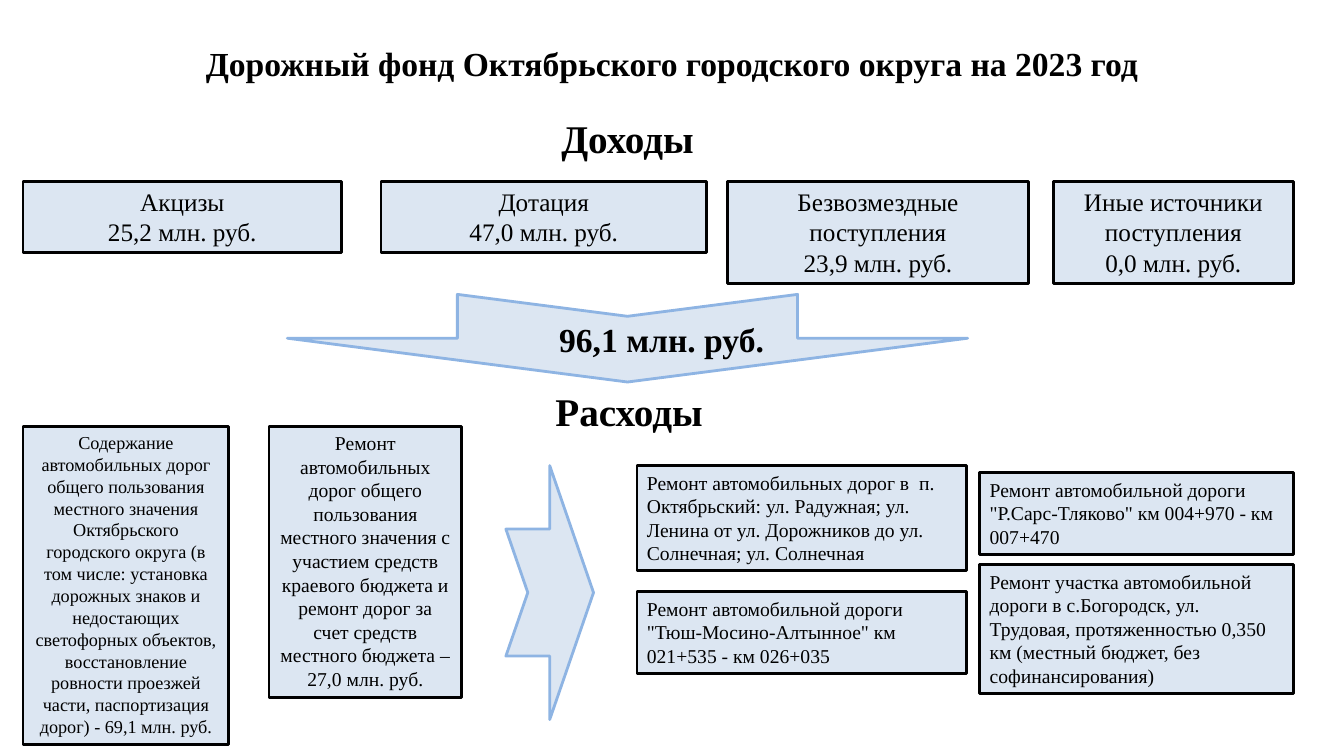
import pptx
import pptx.dml.color
import pptx.enum.shapes
import pptx.enum.text
import pptx.util

Pt = pptx.util.Pt
SHAPES = pptx.enum.shapes.MSO_SHAPE
ALIGN = pptx.enum.text.PP_ALIGN
ANCHOR = pptx.enum.text.MSO_ANCHOR
FIT = pptx.enum.text.MSO_AUTO_SIZE

FONT = "Times New Roman"
BLACK, PALE_BLUE, ARROW_BLUE = "000000", "DCE6F2", "8EB4E3"
INCOME_TOP, EXPENSE_TOP = 129.6, 304.5

INCOME = [
    (16.5, 227.5, 51, "Акцизы\n25,2 млн. руб."),
    (272.2, 232.5, 51, "Дотация\n47,0 млн. руб."),
    (519.8, 214.6, 72.7, "Безвозмездные поступления\n23,9 млн. руб."),
    (752.4, 171.4, 72.7, "Иные источники поступления\n0,0 млн. руб."),
]
EXPENSES = [
    (16.5, 146.9, 227.5, 13,
     "Содержание автомобильных дорог общего пользования местного значения "
     "Октябрьского городского округа (в том числе: установка дорожных знаков и "
     "недостающих светофорных объектов, восстановление ровности проезжей части, "
     "паспортизация дорог) - 69,1 млн. руб."),
    (192.2, 137.5, 193.7, 14,
     "Ремонт автомобильных дорог общего пользования местного значения с участием "
     "средств краевого бюджета и ремонт дорог за счет средств местного бюджета – "
     "27,0 млн. руб."),
]
REPAIRS = [
    (455, 332.6, 235.4, 74.9,
     "Ремонт автомобильных дорог в  п. Октябрьский: ул. Радужная; ул. Ленина "
     "от ул. Дорожников до ул. Солнечная; ул. Солнечная"),
    (455, 422.6, 235.4, 58.3,
     'Ремонт автомобильной дороги "Тюш-Мосино-Алтынное" км 021+535 - км 026+035'),
    (699.8, 337.7, 223.9, 58.3,
     'Ремонт автомобильной дороги "Р.Сарс-Тляково" км 004+970 - км 007+470'),
    (699.8, 403.2, 223.9, 92.2,
     "Ремонт участка автомобильной дороги в с.Богородск, ул. Трудовая, "
     "протяженностью 0,350 км (местный бюджет, без софинансирования)"),
]


def color(value):
    """Return the colour for a hex string."""
    return pptx.dml.color.RGBColor.from_string(value)


def set_attributes(target, values):
    """Set each named attribute of the target."""
    for name, value in values.items():
        setattr(target, name, value)


def place(shape, left, top, width, height):
    """Move and size a shape, in points."""
    frame = {"left": left, "top": top, "width": width, "height": height}
    set_attributes(shape, {name: Pt(value) for name, value in frame.items()})


def write(shape, text, size, alignment, bold=False, **frame_values):
    """Write formatted text into a shape, one paragraph per line."""
    frame = shape.text_frame
    frame.text = text
    defaults = {"word_wrap": True, "vertical_anchor": ANCHOR.TOP,
                "auto_size": FIT.SHAPE_TO_FIT_TEXT}
    set_attributes(frame, {**defaults, **frame_values})
    for paragraph in frame.paragraphs:
        paragraph.alignment = alignment
        for run in paragraph.runs:
            set_attributes(run.font, {"name": FONT, "size": Pt(size), "bold": bold})
            run.font.color.rgb = color(BLACK)


def add_title(slide, text):
    """Fill and place the title placeholder."""
    title = slide.shapes.title
    place(title, 48, 15.8, 864, 59)
    write(title, text, 24, ALIGN.CENTER, True,
          vertical_anchor=ANCHOR.MIDDLE, auto_size=FIT.NONE)


def add_label(slide, box, text, size, alignment=ALIGN.CENTER, **frame_values):
    """Add a bold text box."""
    label = slide.shapes.add_textbox(*map(Pt, box))
    write(label, text, size, alignment, True, **frame_values)


def add_filled_shape(slide, kind, box, line):
    """Add a pale blue preset shape with a coloured outline."""
    shape = slide.shapes.add_shape(kind, *map(Pt, box))
    shape.shadow.inherit = False
    shape.fill.solid()
    shape.fill.fore_color.rgb = color(PALE_BLUE)
    shape.line.color.rgb = color(line)
    shape.line.width = Pt(2)
    return shape


def add_card(slide, box, text, size, alignment=ALIGN.CENTER):
    """Add a black-edged rectangle with text."""
    card = add_filled_shape(slide, SHAPES.RECTANGLE, box, BLACK)
    write(card, text, size, alignment)


def add_arrow(slide, box, rotation=0):
    """Add a notched arrow."""
    arrow = add_filled_shape(slide, SHAPES.NOTCHED_RIGHT_ARROW, box, ARROW_BLUE)
    arrow.rotation = rotation


def main():
    """Build the road fund slide and save it."""
    presentation = pptx.Presentation()
    set_attributes(presentation, {"slide_width": Pt(960), "slide_height": Pt(540)})
    slide = presentation.slides.add_slide(presentation.slide_layouts[5])
    add_title(slide, "Дорожный фонд Октябрьского городского округа на 2023 год")
    add_label(slide, (378.7, 77.8, 139, 41), "Доходы", 28)
    add_label(slide, (388.8, 272.9, 121, 41), "Расходы", 28, word_wrap=False)
    for left, width, height, text in INCOME:
        add_card(slide, (left, INCOME_TOP, width, height), text, 18)
    for left, width, height, size, text in EXPENSES:
        add_card(slide, (left, EXPENSE_TOP, width, height), text, size)
    for *box, text in REPAIRS:
        add_card(slide, box, text, 14, ALIGN.LEFT)
    add_arrow(slide, (416.9, -1.4, 62.6, 486), 90)
    add_arrow(slide, (361.4, 332.6, 62.6, 181.4))
    add_label(slide, (362.2, 223.9, 204.5, 65.5), "96,1 млн. руб.", 24, ALIGN.LEFT,
              margin_left=Pt(37.2))
    presentation.save("out.pptx")


if __name__ == "__main__":
    main()
